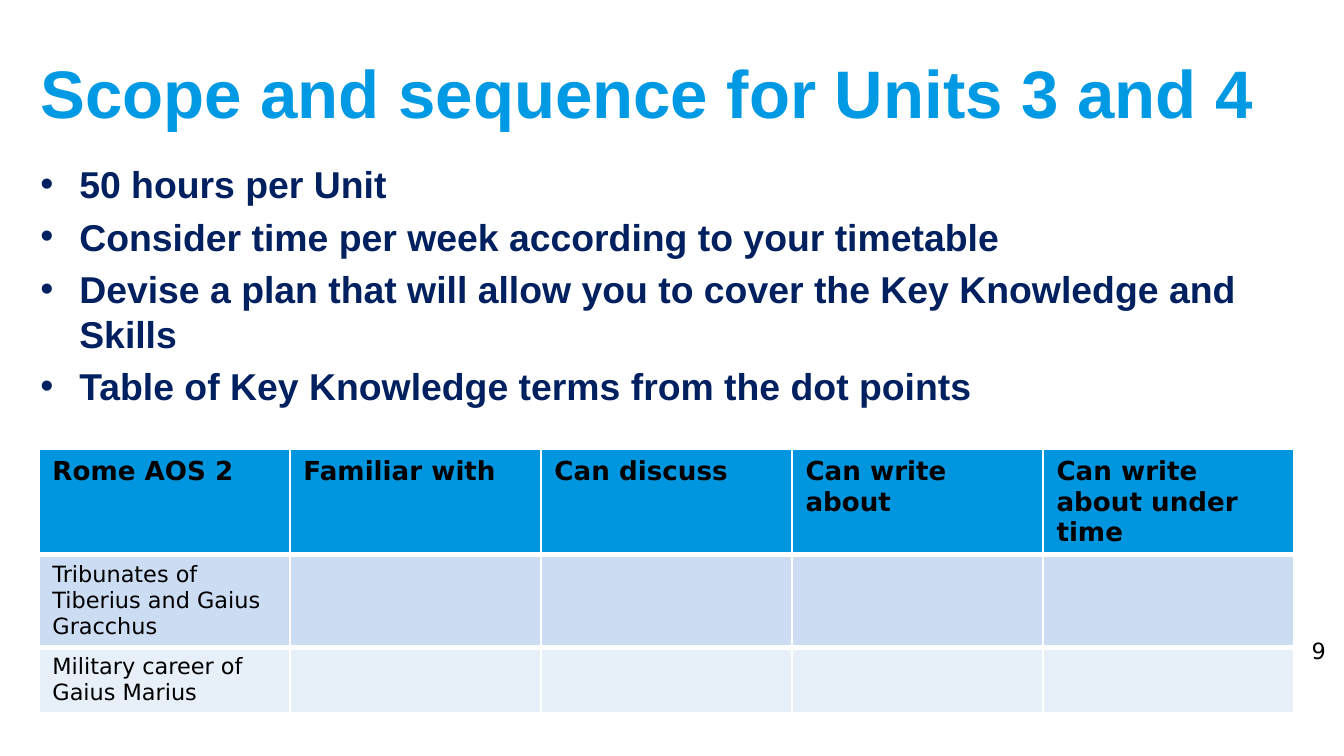
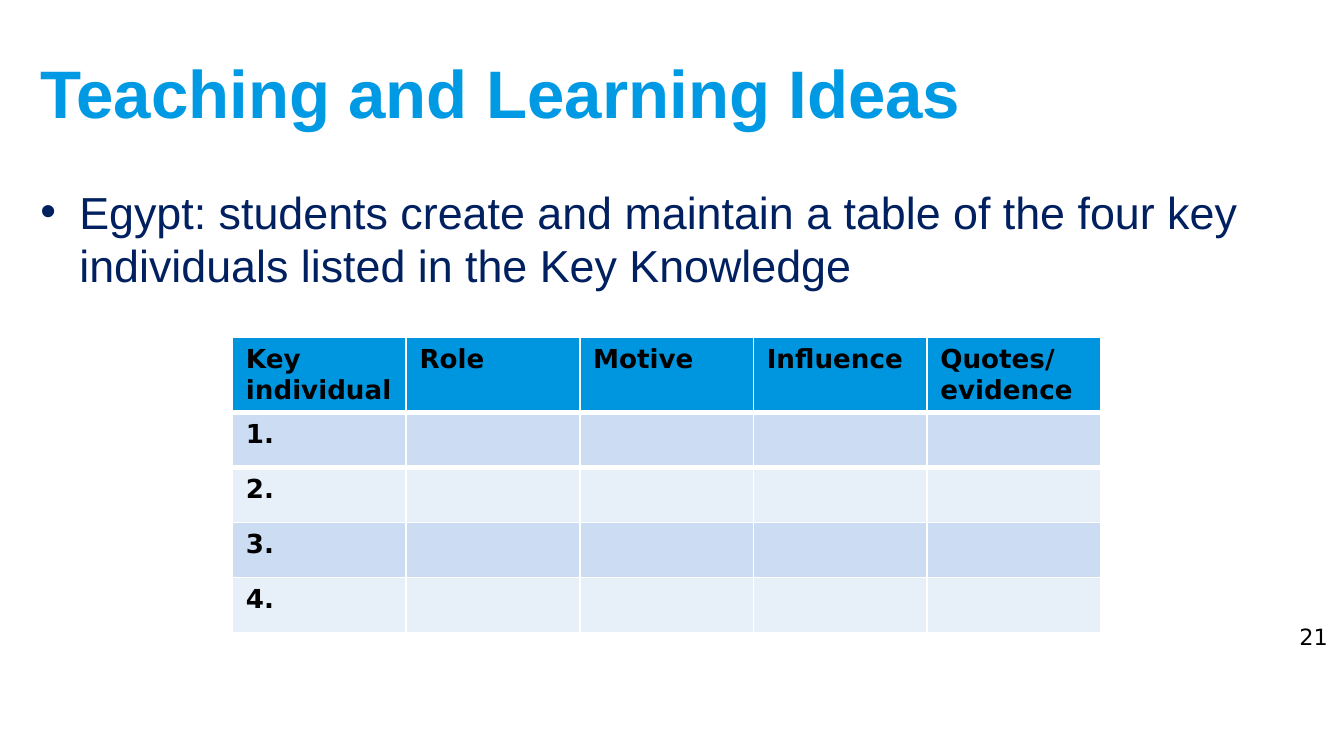
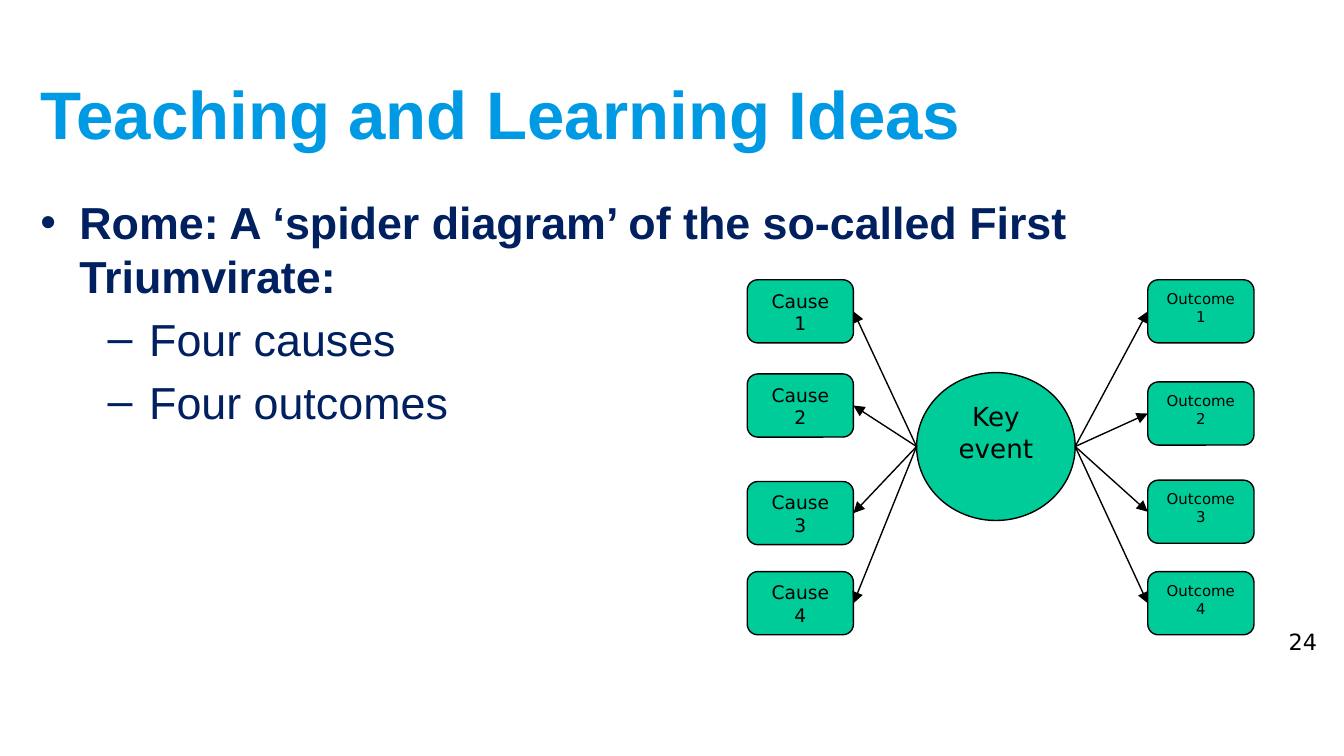
import pptx
import pptx.util
import pptx.dml.color
import pptx.enum.shapes
import pptx.enum.text
import lxml.etree
from pptx.oxml.ns import qn

Pt = pptx.util.Pt
hue = pptx.dml.color.RGBColor.from_string
Align = pptx.enum.text.PP_ALIGN
Anchor = pptx.enum.text.MSO_ANCHOR
Fit = pptx.enum.text.MSO_AUTO_SIZE
Shape = pptx.enum.shapes.MSO_SHAPE
Line = pptx.enum.shapes.MSO_CONNECTOR

SKY, NAVY, BLACK, GREEN, WHITE = "0099E3", "002060", "000000", "00CC99", "FFFFFF"
HEAD, BANDS = "0096DF", ("CCDDF3", "E7EFF9")
SANS, PLAIN = "Arial", "DejaVu Sans"
ROW = 7.28

deck = pptx.Presentation()
deck.slide_width = pptx.util.Inches(10)
deck.slide_height = deck.slide_width * 9 // 16


def box(left, top, wide=0, high=0):
    across, down = deck.slide_width / 100, deck.slide_height / 100
    return [round(n * u) for n, u in zip((left, top, wide, high), (across, down) * 2)]


def style(frame, face, size, tint, bold=False):
    for para in frame.paragraphs:
        for run in para.runs:
            run.font.name = face
            run.font.size = Pt(size)
            run.font.bold = bold
            run.font.color.rgb = hue(tint)


pages = [
    {
        "title": "Scope and sequence for Units 3 and 4", "top": 3.74,
        "body": (2, 20.46, 95.3, 64.59), "inset": 0.05, "size": 20, "bold": True,
        "items": [
            (0, "50 hours per Unit"),
            (0, "Consider time per week according to your timetable"),
            (0, "Devise a plan that will allow you to cover the Key Knowledge and Skills"),
            (0, "Table of Key Knowledge terms from the dot points"),
        ],
        "number": ("9", 96.6, 83.45, 3.9),
        "table": (2.9, 59.43, 93.4),
        "heads": ["Rome AOS 2", "Familiar with", "Can discuss", "Can write about",
                  "Can write about under time"],
        "rows": ["Tribunates of Tiberius and Gaius Gracchus", "Military career of Gaius Marius"],
        "label": (12, False),
    },
    {
        "title": "Teaching and Learning Ideas", "top": 3.74,
        "body": (2, 15.12, 95.3, 57.83), "inset": 0.52, "size": 24, "bold": False,
        "items": [(0, "Egypt: students create and maintain a table of the four key "
                      "individuals listed in the Key Knowledge")],
        "number": ("21", 95.7, 81.49, 6.3),
        "table": (17.3, 44.66, 64.6),
        "heads": ["Key individual", "Role", "Motive", "Influence", "Quotes/\nevidence"],
        "rows": ["1.", "2.", "3.", "4."],
        "label": (14, True),
    },
    {
        "title": "Teaching and Learning Ideas", "top": 6.58,
        "body": (2, 24.91, 95.3, 68.33), "inset": 0.05, "size": 24, "bold": True,
        "items": [
            (0, "Rome: A ‘spider diagram’ of the so-called First Triumvirate:"),
            (1, "Four causes"),
            (1, "Four outcomes"),
        ],
        "number": ("24", 94.9, 82.21, 6.3),
    },
]
levels = [("•", 0.29, 0.29), ("‒", 0.81, 0.31)]

for page in pages:
    slide = deck.slides.add_slide(deck.slide_layouts[1])
    title, body = slide.placeholders
    title.left, title.top, title.width, title.height = box(2, page["top"], 95.3, 16.73)
    frame = title.text_frame
    frame.text = page["title"]
    frame.auto_size = Fit.NONE
    frame.vertical_anchor = Anchor.MIDDLE
    frame.paragraphs[0].alignment = Align.LEFT
    style(frame, SANS, 36, SKY, True)

    body.left, body.top, body.width, body.height = box(*page["body"])
    frame = body.text_frame
    frame.text = "\n".join(text for _, text in page["items"])
    frame.auto_size = Fit.NONE
    frame.margin_top = pptx.util.Inches(page["inset"])
    style(frame, SANS, page["size"], NAVY, page["bold"])
    for i, (para, (level, _)) in enumerate(zip(frame.paragraphs, page["items"])):
        mark, left, hang = levels[level]
        props = para._p.get_or_add_pPr()
        props.set("marL", str(pptx.util.Inches(left)))
        props.set("indent", str(-pptx.util.Inches(hang)))
        lxml.etree.SubElement(props, qn("a:buChar")).set("char", mark)
        para.level = level
        para.space_before = Pt(page["size"] * 0.2 if i else 0)
        if level:
            para.runs[0].font.bold = False

    if "table" in page:
        count = len(page["rows"]) + 1
        grid = slide.shapes.add_table(count, len(page["heads"]),
                                      *box(*page["table"], ROW * count)).table
        for c, head in enumerate(page["heads"]):
            cell = grid.cell(0, c)
            cell.text_frame.text = head
            style(cell.text_frame, PLAIN, 14, BLACK, True)
            for r in range(count):
                fill = grid.cell(r, c).fill
                fill.solid()
                fill.fore_color.rgb = hue(BANDS[(r - 1) % 2] if r else HEAD)
            for r, edge in enumerate(("a:lnB", "a:lnT")):
                props = grid.cell(r, c)._tc.get_or_add_tcPr()
                rule = lxml.etree.Element(qn(edge), w=str(Pt(3)))
                solid = lxml.etree.SubElement(rule, qn("a:solidFill"))
                lxml.etree.SubElement(solid, qn("a:srgbClr")).set("val", WHITE)
                props.insert(0, rule)
        size, bold = page["label"]
        for r, text in enumerate(page["rows"], 1):
            cell = grid.cell(r, 0)
            cell.text_frame.text = text
            style(cell.text_frame, PLAIN, size, BLACK, bold)

    text, left, top, wide = page["number"]
    frame = slide.shapes.add_textbox(*box(left, top, wide, 5.34)).text_frame
    frame.text = text
    frame.word_wrap = True
    frame.auto_size = Fit.SHAPE_TO_FIT_TEXT
    style(frame, PLAIN, 12, BLACK)

nodes = [("Key event", Shape.OVAL, (68.2, 49.29, 11.8, 19.57), 14, None, None)]
sides = [
    ("Cause", 55.6, (37.01, 49.47, 63.7, 75.62), 10, 68.2, 3),
    ("Outcome", 85.4, (37.01, 50.53, 63.52, 75.62), 8, 80, 1),
]
for name, left, tops, size, hub, site in sides:
    for n, top in enumerate(tops, 1):
        nodes.append((f"{name} {n}", Shape.ROUNDED_RECTANGLE,
                      (left, top, 7.9, 8.36), size, hub, site))

for text, kind, place, size, hub, site in nodes:
    node = slide.shapes.add_shape(kind, *box(*place))
    node.shadow.inherit = False
    node.fill.solid()
    node.fill.fore_color.rgb = hue(GREEN)
    node.line.color.rgb = hue(BLACK)
    node.line.width = Pt(0.75)
    frame = node.text_frame
    frame.text = text
    frame.word_wrap = True
    frame.vertical_anchor = Anchor.TOP
    frame.paragraphs[0].alignment = Align.CENTER
    style(frame, PLAIN, size, BLACK)
    if hub:
        start = box(hub, 59.07)[:2]
        arrow = slide.shapes.add_connector(Line.STRAIGHT, *start, *start)
        arrow.end_connect(node, site)
        arrow.line.color.rgb = hue(BLACK)
        arrow.line.width = Pt(0.75)
        tip = lxml.etree.SubElement(arrow.line._get_or_add_ln(), qn("a:tailEnd"))
        tip.set("type", "triangle")
        lxml.etree.SubElement(arrow._element.spPr, qn("a:effectLst"))

deck.save("out.pptx")
